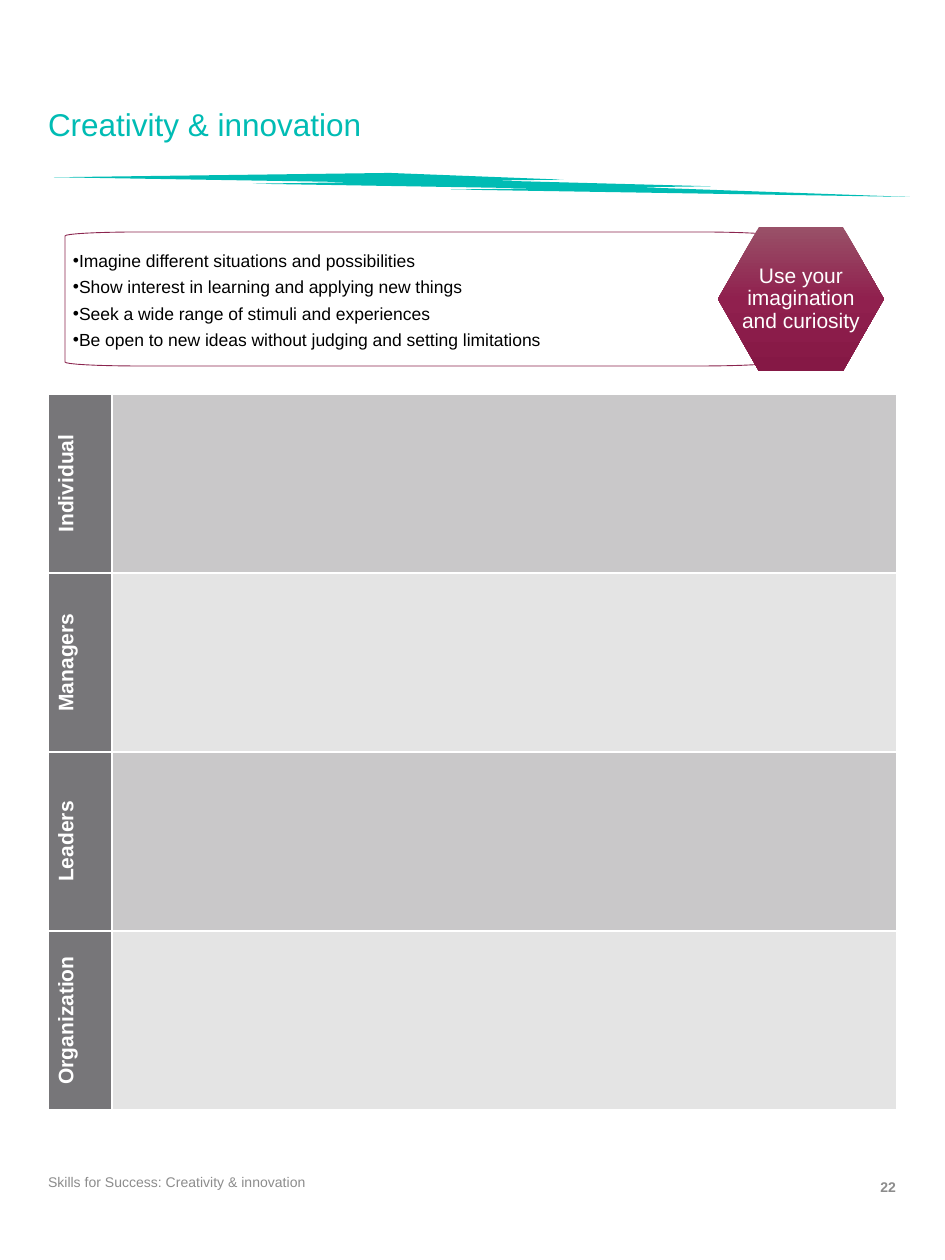
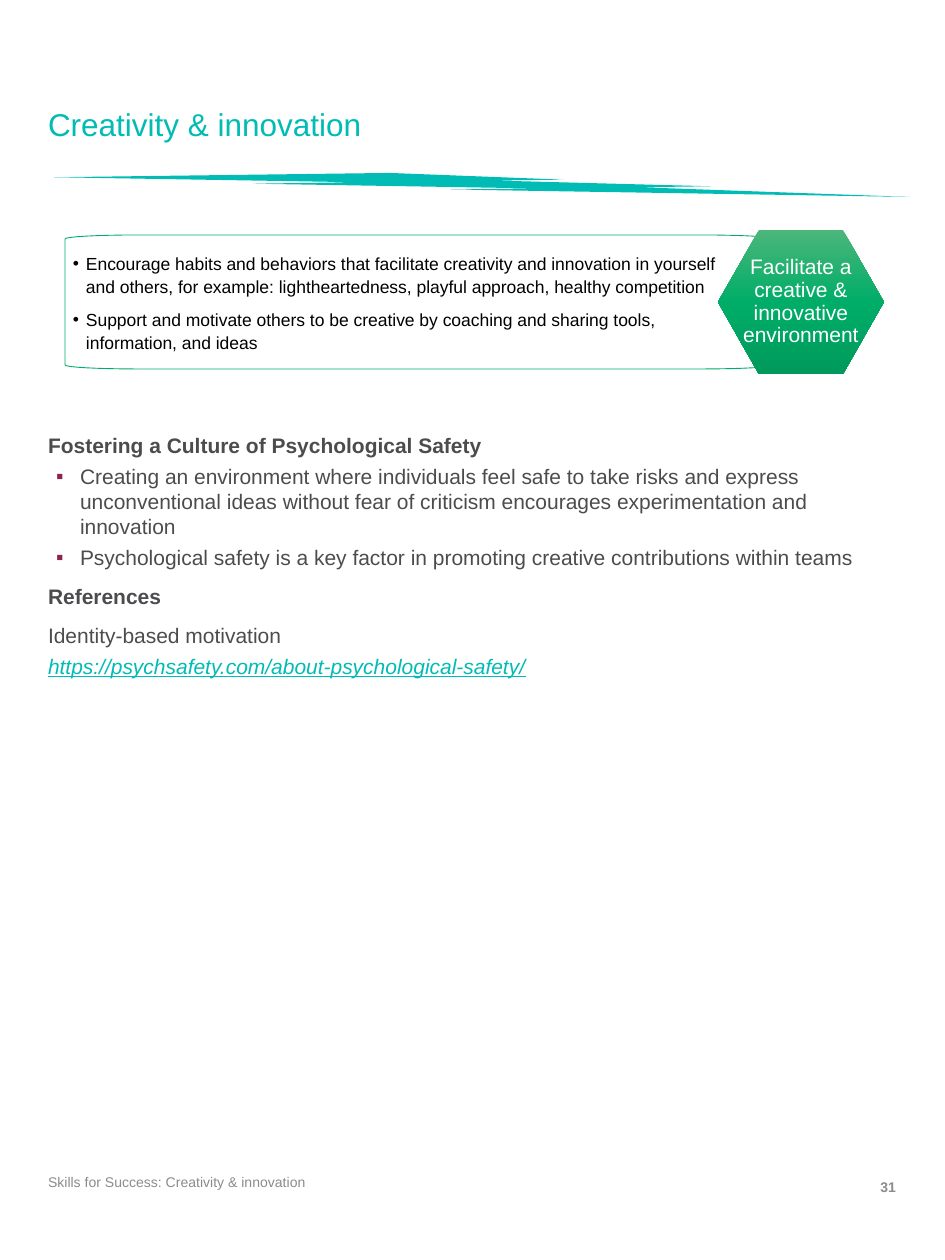
from copy import deepcopy
from math import cos, pi, sin

from lxml import etree
from pptx import Presentation
from pptx.dml.color import RGBColor
from pptx.enum.shapes import MSO_SHAPE
from pptx.enum.text import MSO_ANCHOR, MSO_AUTO_SIZE, PP_ALIGN
from pptx.oxml.ns import qn
from pptx.util import Emu, Pt

LEFT, CENTER, RIGHT = PP_ALIGN.LEFT, PP_ALIGN.CENTER, PP_ALIGN.RIGHT
TOP, MIDDLE = MSO_ANCHOR.TOP, MSO_ANCHOR.MIDDLE
NO_AUTOFIT = MSO_AUTO_SIZE.NONE
LIGHTNING_BOLT = MSO_SHAPE.LIGHTNING_BOLT

PX_PER_INCH = 126
TITLE_ONLY = 5
FONT = "Arial"
TOPIC = "Creativity & innovation"
COLORS = {
    "teal": "00BCB4",
    "plum": "8B254F",
    "green": "00AD68",
    "white": "FFFFFF",
    "black": "000000",
    "body": "4C4C4F",
    "footer": "8C8C8C",
    "row label": "777679",
    "dark band": "C9C8C9",
    "light band": "E4E4E4",
}
PLUM_GRADIENT = ["995168", "90204E", "851845"]
GREEN_GRADIENT = ["4BB67A", "00AD68", "009A5C"]
MARGIN, CONTENT_WIDTH = 48, 849


def px(length):
    return Emu(round(length * 914400 / PX_PER_INCH))


def rgb(name):
    return RGBColor.from_string(COLORS[name])


def write(frame, text, *, size, color, bold=False, italic=False, underline=False,
          align=LEFT, line_spacing=None, before=0, after=0,
          bullet=None, bullet_color=None, indent=0, hanging=0):
    """Add one formatted paragraph, filling the frame's first one if it is empty."""
    paragraph = frame.paragraphs[0]
    if paragraph.text:
        paragraph = frame.add_paragraph()
        paragraph.space_before = Pt(before)
    else:
        paragraph.space_before = Pt(0)
    paragraph.space_after = Pt(after)
    paragraph.alignment = align
    if line_spacing:
        paragraph.line_spacing = line_spacing
    if bullet:
        properties = paragraph._p.get_or_add_pPr()
        properties.set("marL", str(px(indent)))
        properties.set("indent", str(-px(hanging)))
        if bullet_color:
            holder = etree.SubElement(properties, qn("a:buClr"))
            etree.SubElement(holder, qn("a:srgbClr"), val=COLORS[bullet_color])
        etree.SubElement(properties, qn("a:buFont"), typeface=FONT)
        etree.SubElement(properties, qn("a:buChar"), char=bullet)
    paragraph.text = text
    for run in paragraph.runs:
        run.font.name = FONT
        run.font.size = Pt(size)
        run.font.color.rgb = rgb(color)
        run.font.bold = bold
        run.font.italic = italic
        run.font.underline = underline
    for line_break in paragraph._p.findall(qn("a:br")):
        line_break.insert(0, deepcopy(paragraph.runs[0]._r.rPr))


def set_frame(shape, horizontal=0, vertical=0, anchor=MIDDLE):
    frame = shape.text_frame
    frame.word_wrap = True
    frame.auto_size = NO_AUTOFIT
    frame.vertical_anchor = anchor
    frame.margin_left = frame.margin_right = px(horizontal)
    frame.margin_top = frame.margin_bottom = px(vertical)
    return frame


def add_text_box(slide, left, top, width, height, **frame_format):
    box = slide.shapes.add_textbox(px(left), px(top), px(width), px(height))
    return set_frame(box, **frame_format)


def add_outline(slide, points):
    corners = [(px(x), px(y)) for x, y in points]
    builder = slide.shapes.build_freeform(*corners[0], scale=1.0)
    builder.add_line_segments(corners[1:], close=True)
    shape = builder.convert_to_shape()
    shape.shadow.inherit = False
    return shape


def rounded_points(left, top, width, height, radius_x, radius_y):
    """Trace a rectangle with elliptical corners, clockwise from its left side."""
    x_near, x_far = left + radius_x, left + width - radius_x
    y_near, y_far = top + radius_y, top + height - radius_y
    centers = [(x_near, y_near), (x_far, y_near), (x_far, y_far), (x_near, y_far)]
    steps = 8
    points = []
    for quarter, (x, y) in enumerate(centers):
        for step in range(steps + 1):
            angle = pi + (quarter + step / steps) * pi / 2
            points.append((x + radius_x * cos(angle), y + radius_y * sin(angle)))
    return points


def fill_gradient(shape, colors):
    """Fill from top to bottom with three evenly spaced colours."""
    fill = shape.fill
    fill.gradient()
    fill.gradient_angle = 270
    stop_list = shape._element.spPr.find(qn("a:gradFill")).find(qn("a:gsLst"))
    stop_list.append(deepcopy(stop_list[0]))
    for index, (stop, color) in enumerate(zip(fill.gradient_stops, colors)):
        stop.position = index / 2
        stop.color.rgb = RGBColor.from_string(color)


def add_skill_card(slide, top, skill, behaviors, line_color, gradient, indent, spacing):
    """Draw the outlined list of behaviors with the skill's hexagon over its end."""
    panel = add_outline(slide, rounded_points(65, top + 5, 709, 134, 72, 4))
    panel.fill.solid()
    panel.fill.fore_color.rgb = rgb("white")
    fill_color = panel._element.spPr.find(qn("a:solidFill"))[0]
    etree.SubElement(fill_color, qn("a:alpha"), val="90000")
    panel.line.color.rgb = rgb(line_color)
    panel.line.width = Pt(0.5)
    frame = set_frame(panel, 8, 8)
    for behavior in behaviors:
        write(frame, behavior, size=10, color="black", line_spacing=1.1,
              before=spacing, after=spacing, bullet="•", indent=indent, hanging=indent)

    left, width, height, slant = 718, 166, 144, 41
    right, middle, bottom = left + width, top + height / 2, top + height
    hexagon = add_outline(slide, [
        (left, middle), (left + slant, top), (right - slant, top),
        (right, middle), (right - slant, bottom), (left + slant, bottom)])
    fill_gradient(hexagon, gradient)
    hexagon.line.fill.background()
    write(set_frame(hexagon, 21, 19), skill, size=12, color="white",
          align=CENTER, line_spacing=0.9)


def add_topic_slide(presentation, page_number):
    """Add a slide with the title, bolt and footer that all slides share."""
    slide = presentation.slides.add_slide(presentation.slide_layouts[TITLE_ONLY])
    title = slide.shapes.title
    title.left, title.top = px(MARGIN), px(67)
    title.width, title.height = px(CONTENT_WIDTH), px(118)
    write(set_frame(title), TOPIC, size=18, color="teal", line_spacing=0.9)

    bolt = slide.shapes.add_shape(LIGHTNING_BOLT, px(54), px(173), px(856), px(24))
    bolt.shadow.inherit = False
    bolt.fill.solid()
    bolt.fill.fore_color.rgb = rgb("teal")
    bolt.line.fill.background()

    footer = add_text_box(slide, MARGIN, 1159, 319, 45, vertical=6)
    write(footer, f"Skills for Success: {TOPIC}", size=8, color="footer")
    page = add_text_box(slide, 798, 1168, 98, 38, vertical=6)
    write(page, str(page_number), size=8, color="footer", bold=True, align=RIGHT)
    return slide


def format_cell(cell, color):
    properties = cell._tc.get_or_add_tcPr()
    for side in ("lnL", "lnR", "lnT", "lnB"):
        border = etree.SubElement(properties, qn(f"a:{side}"), w=str(Pt(1)))
        fill = etree.SubElement(border, qn("a:solidFill"))
        etree.SubElement(fill, qn("a:srgbClr"), val=COLORS["white"])
    cell.fill.solid()
    cell.fill.fore_color.rgb = rgb(color)


def add_notes_table(slide, roles):
    """Add one banded row per role, with the role's name turned upwards."""
    label_width, row_height = 64, 179
    table = slide.shapes.add_table(
        len(roles), 2, px(MARGIN), px(394),
        px(CONTENT_WIDTH), px(row_height * len(roles))).table
    table.first_row = table.horz_banding = False
    table.columns[0].width = px(label_width)
    table.columns[1].width = px(CONTENT_WIDTH - label_width)
    for index, role in enumerate(roles):
        table.rows[index].height = px(row_height)
        label, notes = table.cell(index, 0), table.cell(index, 1)
        format_cell(label, "row label")
        format_cell(notes, "light band" if index % 2 else "dark band")
        label.vertical_anchor = MIDDLE
        label._tc.tcPr.set("vert", "vert270")
        write(label.text_frame, role, size=12, color="white", bold=True, align=CENTER)


def add_safety_text(slide):
    frame = add_text_box(slide, MARGIN, 432, CONTENT_WIDTH, 286, anchor=TOP)
    body = {"size": 12, "color": "body", "before": 6, "after": 1.7}
    point = {**body, "before": 1.7, "bullet": "▪", "bullet_color": "plum",
             "indent": 32, "hanging": 24}
    link = {**body, "color": "teal", "before": 1.7, "italic": True, "underline": True}
    write(frame, "Fostering a Culture of Psychological Safety", bold=True, **body)
    write(frame, "Creating an environment where individuals feel safe to take risks and "
          "express unconventional ideas without fear of criticism encourages "
          "experimentation and innovation", **point)
    write(frame, "Psychological safety is a key factor in promoting creative "
          "contributions within teams", **point)
    write(frame, "References", bold=True, **body)
    write(frame, "Identity-based motivation", **body)
    write(frame, "https://psychsafety.com/about-psychological-safety/", **link)


def main():
    presentation = Presentation()
    presentation.slide_width, presentation.slide_height = px(945), px(1260)

    imagination = add_topic_slide(presentation, 22)
    add_skill_card(imagination, 227, "Use your imagination and curiosity", [
        "Imagine different situations and possibilities",
        "Show interest in learning and applying new things",
        "Seek a wide range of stimuli and experiences",
        "Be open to new ideas without judging and setting limitations",
    ], "plum", PLUM_GRADIENT, indent=6, spacing=1)
    add_notes_table(imagination, ["Individual", "Managers", "Leaders", "Organization"])

    environment = add_topic_slide(presentation, 31)
    add_skill_card(environment, 230, "Facilitate a creative & innovative environment", [
        "Encourage habits and behaviors that facilitate creativity and innovation in "
        "yourself\vand others, for example: lightheartedness, playful approach, "
        "healthy competition",
        "Support and motivate others to be creative by coaching and sharing tools,"
        "\vinformation, and ideas",
    ], "green", GREEN_GRADIENT, indent=13, spacing=3)
    add_safety_text(environment)

    presentation.save("out.pptx")


if __name__ == "__main__":
    main()
